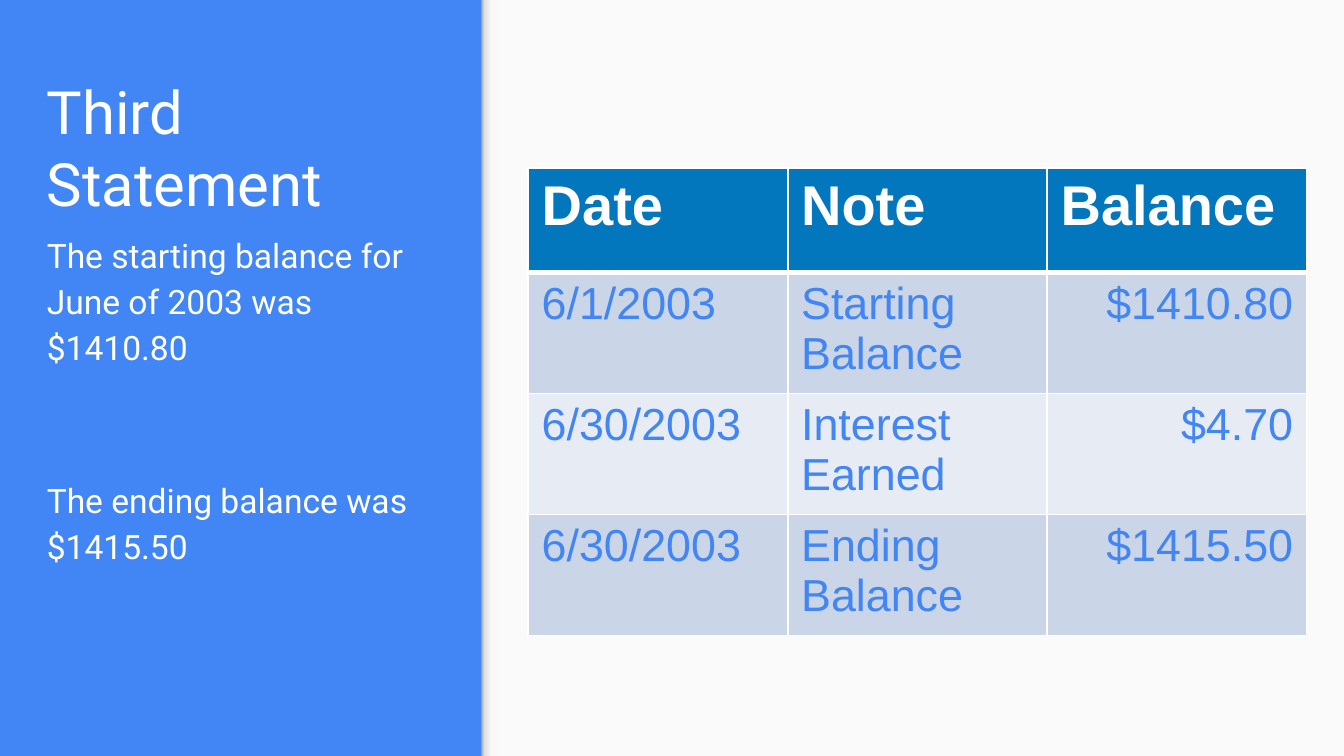
from lxml.etree import SubElement
from pptx import Presentation
from pptx.dml.color import RGBColor
from pptx.enum.shapes import MSO_SHAPE
from pptx.enum.text import MSO_ANCHOR, PP_ALIGN
from pptx.oxml.ns import qn
from pptx.util import Pt

WIDTH, HEIGHT = 720, 405
EDGE = 257.76
WHITE, BLUE = "FFFFFF", "4285F4"
ROWS = [
    ("Date", "Note", "Balance"),
    ("6/1/2003", "Starting Balance", "$1410.80"),
    ("6/30/2003", "Interest Earned", "$4.70"),
    ("6/30/2003", "Ending Balance", "$1415.50"),
]
FILLS = ["0277BD", "CAD5E7", "E6EBF4", "CAD5E7"]
SHADE = [(0, "999999"), (20, "DEDEDE"), (64, "F9F9F9"), (100, "F9F9F9")]


def paint(fill, color):
    fill.solid()
    fill.fore_color.rgb = RGBColor.from_string(color)


def style(font, name, size, color, bold=False):
    font.name, font.size, font.bold = name, Pt(size), bold
    font.color.rgb = RGBColor.from_string(color)


def add_rect(slide, left, width, color):
    """Add a plain rectangle of full slide height."""
    rect = slide.shapes.add_shape(
        MSO_SHAPE.RECTANGLE, Pt(left), Pt(0), Pt(width), Pt(HEIGHT))
    rect.shadow.inherit = False
    rect.line.fill.background()
    paint(rect.fill, color)
    return rect


def shade(rect, stops):
    """Fill a shape with a left-to-right gradient of (percent, colour) stops."""
    rect.fill.gradient()
    rect.fill.gradient_angle = 0
    group = rect._element.spPr.find(qn("a:gradFill")).find(qn("a:gsLst"))
    for old in list(group):
        group.remove(old)
    for place, color in stops:
        stop = SubElement(group, qn("a:gs"), pos=str(place * 1000))
        SubElement(stop, qn("a:srgbClr"), val=color)


def add_text(slide, top, height, size, lines, anchor=MSO_ANCHOR.TOP,
             pitch=None, gap=0):
    """Add text to the blue side, with a gap between its paragraphs."""
    box = slide.shapes.add_textbox(Pt(18), Pt(top), Pt(221), Pt(height))
    frame = box.text_frame
    frame.word_wrap = True
    frame.vertical_anchor = anchor
    frame.margin_left = frame.margin_right = Pt(7.2)
    frame.margin_top = frame.margin_bottom = Pt(7.2)
    frame.text = "\n".join(lines)
    for index, para in enumerate(frame.paragraphs):
        style(para.font, "Roboto", size, WHITE)
        para.line_spacing = pitch
        para.space_before = Pt(gap if index else 0)


def add_border(cell, top, bottom):
    """Draw white cell edges; top and bottom widths are in points."""
    props = cell._tc.get_or_add_tcPr()
    edges = [("L", 1), ("R", 1), ("T", top), ("B", bottom)]
    for index, (side, width) in enumerate(edges):
        line = SubElement(props, qn(f"a:ln{side}"), w=str(Pt(width)))
        fill = SubElement(line, qn("a:solidFill"))
        SubElement(fill, qn("a:srgbClr"), val=WHITE)
        props.insert(index, line)


def add_table(slide):
    count = len(ROWS[0])
    table = slide.shapes.add_table(
        len(ROWS), count, Pt(283), Pt(90), Pt(139 * count),
        Pt(56 * len(ROWS))).table
    for r, row in enumerate(ROWS):
        for c, text in enumerate(row):
            cell = table.cell(r, c)
            cell.text = text
            paint(cell.fill, FILLS[r])
            add_border(cell, 3 if r == 1 else 1, 3 if r == 0 else 1)
            para = cell.text_frame.paragraphs[0]
            if r == 0:
                style(para.font, "Arial", 30, WHITE, True)
            else:
                style(para.font, "Arial", 24, BLUE)
                if c == count - 1:
                    para.alignment = PP_ALIGN.RIGHT


def main():
    deck = Presentation()
    deck.slide_width, deck.slide_height = Pt(WIDTH), Pt(HEIGHT)
    slide = deck.slides.add_slide(deck.slide_layouts[6])
    paint(slide.background.fill, BLUE)
    add_rect(slide, EDGE, WIDTH - EDGE, "FAFAFA")
    shade(add_rect(slide, EDGE, 8.64, "F9F9F9"), SHADE)
    add_text(slide, 28, 96, 32, ["Third Statement"], MSO_ANCHOR.BOTTOM)
    add_text(slide, 115.2, 249, 18, [
        "The starting balance for June of 2003 was $1410.80",
        "The ending balance was $1415.50",
    ], pitch=1.15, gap=57)
    add_table(slide)
    deck.save("out.pptx")


if __name__ == "__main__":
    main()
